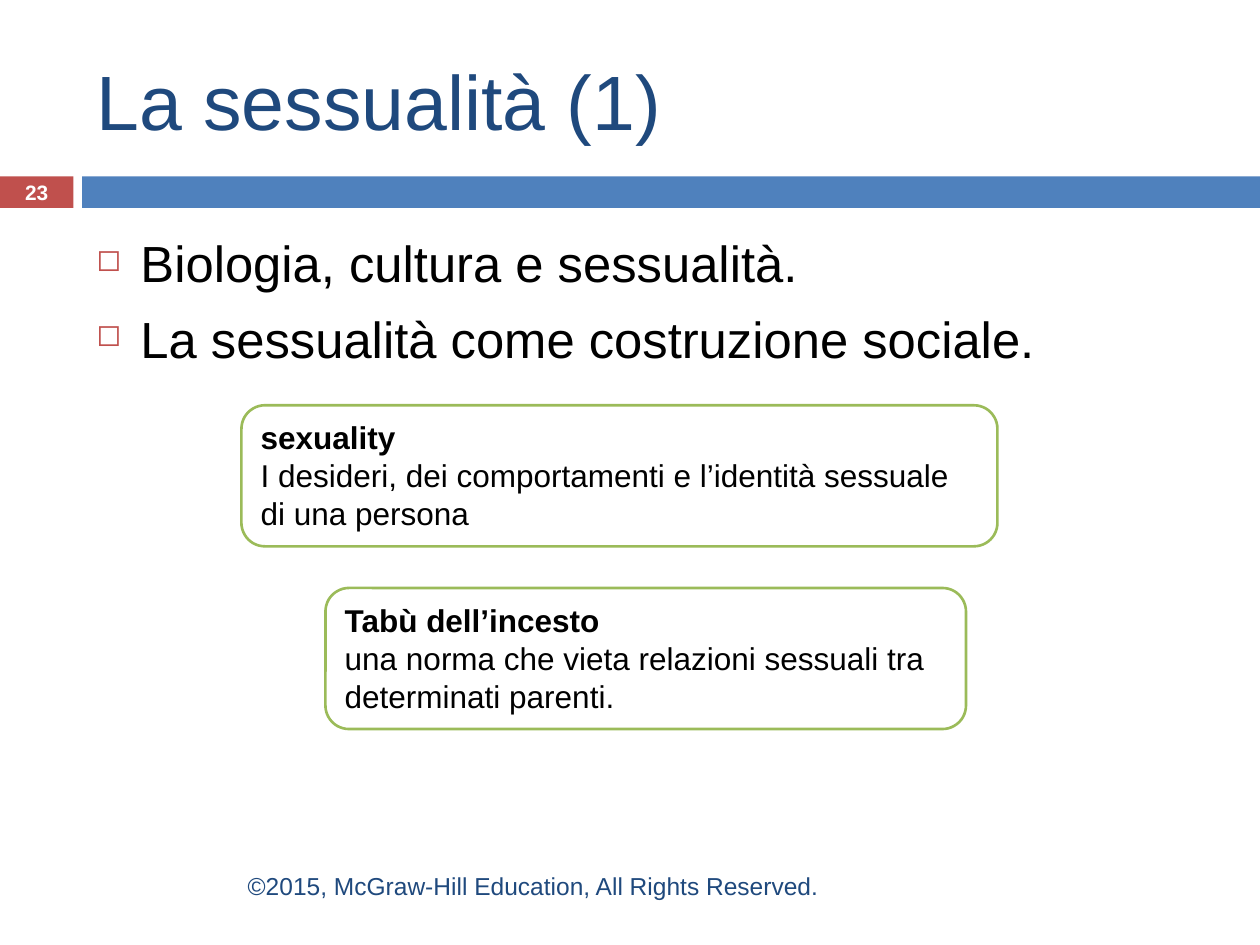
from dataclasses import dataclass

from lxml import etree
from pptx import Presentation
from pptx import util as u
from pptx.dml.color import RGBColor
from pptx.enum import shapes, text
from pptx.oxml import ns

Pt = u.Pt


@dataclass(frozen=True)
class Theme:
    """Colours, font and type sizes of the slide."""

    font: str = "Arial"
    navy: str = "1F497D"
    blue: str = "4F81BD"
    red: str = "C0504D"
    green: str = "9BBB59"
    black: str = "000000"
    white: str = "FFFFFF"
    title: float = 44
    body: float = 29
    definition: float = 18
    footer: float = 14
    number: float = 11.9


THEME = Theme()


def rgb(value):
    """Turn a hex value into a colour."""
    return RGBColor.from_string(value)


def add_run(paragraph, words, size, colour, bold=False):
    """Add one styled run to a paragraph."""
    run = paragraph.add_run()
    run.text = words
    run.font.name = THEME.font
    run.font.size = Pt(size)
    run.font.bold = bold
    run.font.color.rgb = rgb(colour)


def add_panel(slide, kind, box, fill, line=None):
    """Add a flat filled shape with an optional outline."""
    shape = slide.shapes.add_shape(kind, *map(Pt, box))
    shape.shadow.inherit = False
    shape.fill.solid()
    shape.fill.fore_color.rgb = rgb(fill)
    if line:
        shape.line.color.rgb = rgb(line)
        shape.line.width = Pt(1.5)
    else:
        shape.line.fill.background()
    return shape


def add_label(slide, box, words, size, colour, align, bold=False):
    """Add a single vertically centred line of text."""
    frame = slide.shapes.add_textbox(*map(Pt, box)).text_frame
    frame.word_wrap = True
    frame.vertical_anchor = text.MSO_ANCHOR.MIDDLE
    paragraph = frame.paragraphs[0]
    paragraph.alignment = align
    add_run(paragraph, words, size, colour, bold)


def add_band(slide, box, number):
    """Add the numbered red tab and the blue bar beside it."""
    left, top, width, height = box
    tab, gap = 42, 5
    tab_box = (left, top, tab, height)
    bar_box = (left + tab + gap, top, width - tab - gap, height)
    for part, colour in ((tab_box, THEME.red), (bar_box, THEME.blue)):
        add_panel(slide, shapes.MSO_SHAPE.RECTANGLE, part, colour)
    add_label(slide, tab_box, number, THEME.number, THEME.white,
              text.PP_ALIGN.CENTER, bold=True)


def add_bullet(paragraph):
    """Give a paragraph a hanging red square bullet."""
    properties = paragraph._p.get_or_add_pPr()
    properties.set("marL", str(Pt(25.2)))
    properties.set("indent", str(-Pt(25.2)))
    colour = etree.SubElement(properties, ns.qn("a:buClr"))
    etree.SubElement(colour, ns.qn("a:srgbClr"), val=THEME.red)
    etree.SubElement(properties, ns.qn("a:buSzPct"), val="60000")
    etree.SubElement(properties, ns.qn("a:buChar"), char="◻")


def add_body(slide, box, points):
    """Add the bulleted list."""
    frame = slide.shapes.add_textbox(*map(Pt, box)).text_frame
    frame.word_wrap = True
    frame.margin_top = Pt(6.5)
    for index, point in enumerate(points):
        paragraph = frame.add_paragraph() if index else frame.paragraphs[0]
        add_bullet(paragraph)
        if index:
            paragraph.space_before = Pt(8.3)
        add_run(paragraph, point, THEME.body, THEME.black)


def add_definition(slide, box, term, lines):
    """Add a rounded box with a bold term above its meaning."""
    shape = add_panel(slide, shapes.MSO_SHAPE.ROUNDED_RECTANGLE, box,
                      THEME.white, THEME.green)
    frame = shape.text_frame
    frame.word_wrap = True
    frame.vertical_anchor = text.MSO_ANCHOR.TOP
    for index, words in enumerate((term, *lines)):
        paragraph = frame.add_paragraph() if index else frame.paragraphs[0]
        paragraph.alignment = text.PP_ALIGN.LEFT
        add_run(paragraph, words, THEME.definition, THEME.black, bold=index == 0)


def main():
    """Build the slide and save it."""
    presentation = Presentation()
    presentation.slide_width, presentation.slide_height = Pt(720), Pt(540)
    slide = presentation.slides.add_slide(presentation.slide_layouts[6])
    margin, width = 48, 642
    add_band(slide, (0, 100.8, 720, 18), "23")
    add_label(slide, (margin, 18, width, 78), "La sessualità (1)",
              THEME.title, THEME.navy, text.PP_ALIGN.LEFT)
    add_body(slide, (margin, 126, width, 354),
             ("Biologia, cultura e sessualità.",
              "La sessualità come costruzione sociale."))
    add_definition(slide, (138, 231.6, 432, 80.6), "sexuality",
                   ("I desideri, dei comportamenti e l’identità sessuale",
                    "di una persona"))
    add_definition(slide, (186, 336, 366, 80.6), "Tabù dell’incesto",
                   ("una norma che vieta relazioni sessuali tra "
                    "determinati parenti.",))
    add_label(slide, (margin, 492, 427, 28.8),
              "©2015, McGraw-Hill Education, All Rights Reserved.",
              THEME.footer, THEME.navy, text.PP_ALIGN.RIGHT)
    presentation.save("out.pptx")


if __name__ == "__main__":
    main()
